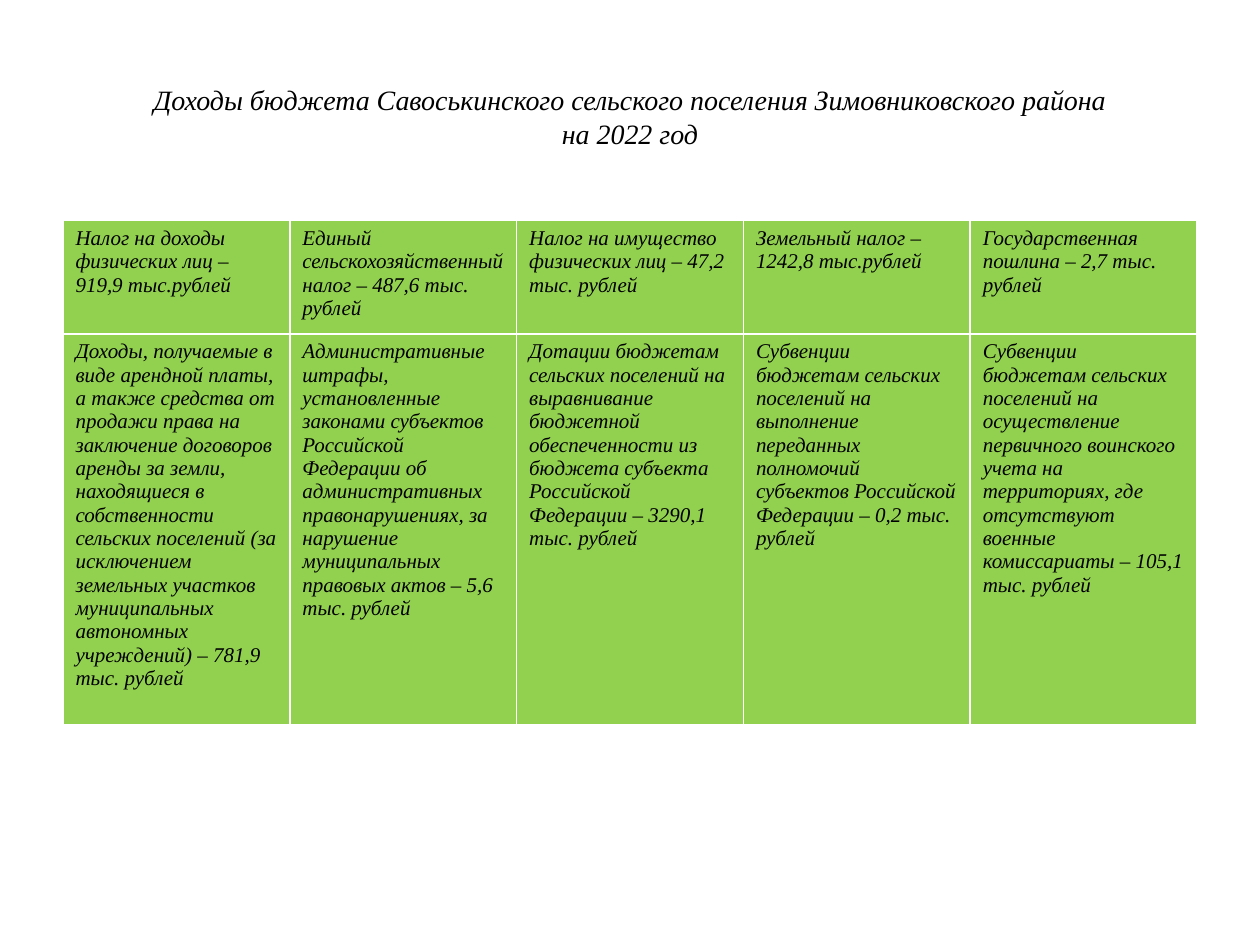
from dataclasses import dataclass

from pptx import Presentation
from pptx.dml.color import RGBColor
from pptx.enum.text import MSO_ANCHOR, PP_ALIGN
from pptx.slide import Slide
from pptx.text.text import TextFrame
from pptx.util import Inches, Pt

CENTER = PP_ALIGN.CENTER
LEFT = PP_ALIGN.LEFT
MIDDLE = MSO_ANCHOR.MIDDLE


@dataclass(frozen=True)
class Theme:
    font: str = "Times New Roman"
    ink: RGBColor = RGBColor(0x00, 0x00, 0x00)
    cell: RGBColor = RGBColor(0x92, 0xD0, 0x50)
    title_size: Pt = Pt(16)
    cell_size: Pt = Pt(12)


@dataclass(frozen=True)
class Income:
    source: str
    amount: str

    def text(self) -> str:
        return f"{self.source} – {self.amount}"


THEME = Theme()
TITLE = "Доходы бюджета Савоськинского сельского поселения Зимовниковского района\vна 2022 год"
INCOME_ROWS = [
    [
        Income("Налог на доходы физических лиц", "919,9 тыс.рублей"),
        Income("Единый сельскохозяйственный налог", "487,6 тыс. рублей"),
        Income("Налог на имущество физических лиц", "47,2 тыс. рублей"),
        Income("Земельный налог", "1242,8 тыс.рублей"),
        Income("Государственная пошлина", "2,7 тыс. рублей"),
    ],
    [
        Income(
            "Доходы, получаемые в виде арендной платы, а также средства от продажи права "
            "на заключение договоров аренды за земли, находящиеся в собственности сельских "
            "поселений (за исключением земельных участков муниципальных автономных учреждений)",
            "781,9 тыс. рублей",
        ),
        Income(
            "Административные штрафы, установленные законами субъектов Российской Федерации "
            "об административных правонарушениях, за нарушение муниципальных правовых актов",
            "5,6 тыс. рублей",
        ),
        Income(
            "Дотации бюджетам сельских поселений на выравнивание бюджетной обеспеченности "
            "из бюджета субъекта Российской Федерации",
            "3290,1 тыс. рублей",
        ),
        Income(
            "Субвенции бюджетам сельских поселений на выполнение переданных полномочий "
            "субъектов Российской Федерации",
            "0,2 тыс. рублей",
        ),
        Income(
            "Субвенции бюджетам сельских поселений на осуществление первичного воинского "
            "учета на территориях, где отсутствуют военные комиссариаты",
            "105,1 тыс. рублей",
        ),
    ],
]


def write(frame: TextFrame, text: str, size: Pt, alignment: PP_ALIGN) -> None:
    frame.text = text
    paragraph = frame.paragraphs[0]
    paragraph.alignment = alignment
    font_format = {"name": THEME.font, "size": size, "italic": True, "bold": False}
    for run in paragraph.runs:
        for attribute, value in font_format.items():
            setattr(run.font, attribute, value)
        run.font.color.rgb = THEME.ink


def add_title(slide: Slide) -> None:
    title = slide.shapes.add_textbox(Inches(0.5), Inches(0.3), Inches(9), Inches(1.25))
    frame_format = {"word_wrap": True, "vertical_anchor": MIDDLE}
    for attribute, value in frame_format.items():
        setattr(title.text_frame, attribute, value)
    write(title.text_frame, TITLE, THEME.title_size, CENTER)


def add_income_table(slide: Slide) -> None:
    income_frame = slide.shapes.add_table(
        len(INCOME_ROWS), len(INCOME_ROWS[0]),
        Inches(0.5), Inches(1.75), Inches(9), Inches(0.82),
    )
    income_frame.height = Inches(4)
    for row, incomes in enumerate(INCOME_ROWS):
        for column, income in enumerate(incomes):
            cell = income_frame.table.cell(row, column)
            cell.fill.solid()
            cell.fill.fore_color.rgb = THEME.cell
            write(cell.text_frame, income.text(), THEME.cell_size, LEFT)


def main() -> None:
    presentation = Presentation()
    presentation.slide_width = Inches(10)
    presentation.slide_height = Inches(7.5)
    slide = presentation.slides.add_slide(presentation.slide_layouts[6])
    add_title(slide)
    add_income_table(slide)
    presentation.save("out.pptx")


if __name__ == "__main__":
    main()
